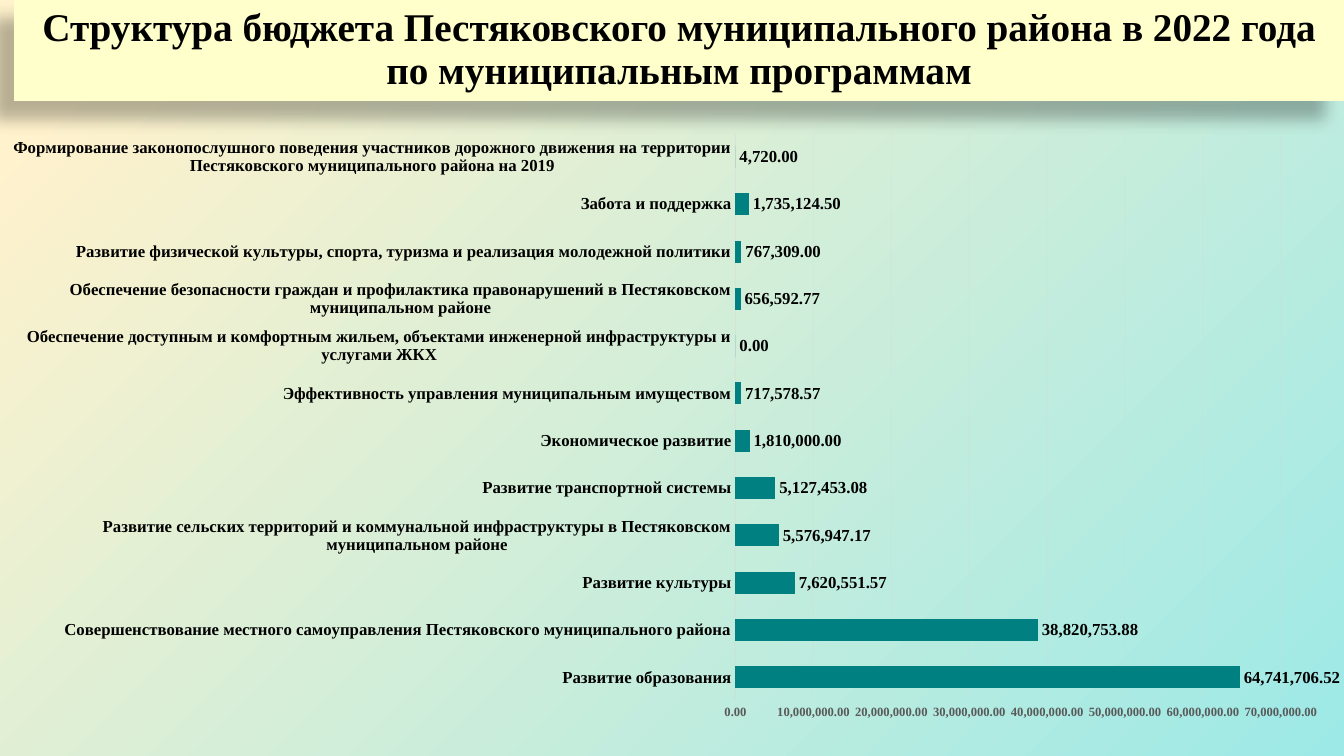
from dataclasses import dataclass

from pptx import Presentation
from pptx.chart.data import CategoryChartData
from pptx.dml.color import RGBColor as Rgb
from pptx.enum.chart import XL_CHART_TYPE as ChartType
from pptx.enum.chart import XL_LABEL_POSITION as LabelPosition
from pptx.enum.chart import XL_TICK_MARK as TickMark
from pptx.enum.text import MSO_ANCHOR as Anchor
from pptx.enum.text import MSO_AUTO_SIZE as AutoSize
from pptx.enum.text import PP_ALIGN as Align
from pptx.oxml import parse_xml
from pptx.oxml.ns import nsdecls, qn
from pptx.oxml.xmlchemy import OxmlElement
from pptx.util import Pt


@dataclass(frozen=True)
class Theme:
    font: str = "Times New Roman"
    base_font: str = "Calibri"
    ink: str = "000000"
    muted: str = "595959"
    grid: str = "D9D9D9"
    bar: str = "008080"
    banner: str = "FFFFCC"
    aqua: str = "9DE9E7"
    cream: str = "FFF2CC"
    title_size: float = 28
    label_size: float = 12
    base_size: float = 10
    scale_size: float = 9


@dataclass(frozen=True)
class Box:
    left: float
    top: float
    width: float
    height: float


@dataclass(frozen=True)
class Program:
    name: str
    amount: float


THEME = Theme()
TITLE = "Структура бюджета Пестяковского муниципального района в 2022 года по муниципальным программам"
TITLE_BOX = Box(10, 0, 950, 72)
CHART_BOX = Box(9.5, 86.5, 951, 436)
PLOT_SHARE = {"x": 0.542, "y": 0.02, "w": 0.41, "h": 0.93}
MONEY = "#,##0.00"
PROGRAMS = [
    Program("Развитие образования", 64741706.52),
    Program("Совершенствование местного самоуправления Пестяковского муниципального района", 38820753.88),
    Program("Развитие культуры", 7620551.57),
    Program("Развитие сельских территорий и коммунальной инфраструктуры в Пестяковском муниципальном районе", 5576947.17),
    Program("Развитие транспортной системы", 5127453.08),
    Program("Экономическое развитие", 1810000),
    Program("Эффективность управления муниципальным имуществом", 717578.57),
    Program("Обеспечение доступным и комфортным жильем, объектами инженерной инфраструктуры и услугами ЖКХ", 0),
    Program("Обеспечение безопасности граждан и профилактика правонарушений в Пестяковском муниципальном районе", 656592.77),
    Program("Развитие физической культуры, спорта, туризма и реализация молодежной политики", 767309),
    Program("Забота и поддержка", 1735124.5),
    Program("Формирование законопослушного поведения участников дорожного движения на территории Пестяковского муниципального района на 2019", 4720),
]


def style_font(font, *, size: float, color: str = THEME.ink, bold: bool = True, name: str = THEME.font) -> None:
    font.name = name
    font.size = Pt(size)
    font.bold = bold
    font.color.rgb = Rgb.from_string(color)


def write_text(frame, text: str, *, size: float, align: Align, spacing: float) -> None:
    frame.text = text
    frame.word_wrap = True
    frame.auto_size = AutoSize.NONE
    frame.vertical_anchor = Anchor.MIDDLE
    paragraph = frame.paragraphs[0]
    paragraph.alignment = align
    paragraph.line_spacing = spacing
    style_font(paragraph.runs[0].font, size=size)


def paint_background(slide) -> None:
    fill = slide.background.fill
    fill.gradient()
    for stop, color, position in zip(fill.gradient_stops, (THEME.aqua, THEME.cream), (0, 0.93)):
        stop.color.rgb = Rgb.from_string(color)
        stop.position = position
    gradient = slide.element.find(".//" + qn("a:gradFill"))
    linear = gradient.find(qn("a:lin"))
    if linear is not None:
        gradient.remove(linear)
    gradient.find(qn("a:gsLst")).addnext(parse_xml(
        f'<a:path {nsdecls("a")} path="circle"><a:fillToRect l="100000" t="100000"/></a:path>'))


def add_title(slide) -> None:
    banner = slide.shapes.title
    banner.left, banner.top = Pt(TITLE_BOX.left), Pt(TITLE_BOX.top)
    banner.width, banner.height = Pt(TITLE_BOX.width), Pt(TITLE_BOX.height)
    banner.fill.solid()
    banner.fill.fore_color.rgb = Rgb.from_string(THEME.banner)
    write_text(banner.text_frame, TITLE, size=THEME.title_size, align=Align.CENTER, spacing=0.9)
    banner.shadow.inherit = False
    banner.element.spPr.find(qn("a:effectLst")).append(parse_xml(
        f'<a:outerShdw {nsdecls("a")} blurRad="{Pt(11.8)}" dist="{Pt(19.7)}" dir="{141 * 60000}" '
        'algn="ctr" rotWithShape="0"><a:srgbClr val="000000"><a:alpha val="28000"/></a:srgbClr></a:outerShdw>'))


def style_faint_line(line_format, width: float) -> None:
    line_format.line.width = Pt(width)
    line_format.line.color.rgb = Rgb.from_string(THEME.grid)
    alpha = OxmlElement("a:alpha")
    alpha.set("val", "25000")
    line_format.element.find(".//" + qn("a:srgbClr")).append(alpha) if hasattr(
        line_format, "element") else line_format._element.find(
        qn("c:spPr")).find(".//" + qn("a:srgbClr")).append(alpha)


def place_plot(chart) -> None:
    plot_area = chart.element.find(".//" + qn("c:plotArea"))
    for layout in plot_area.findall(qn("c:layout")):
        plot_area.remove(layout)
    shares = "".join(f'<c:{side} val="{share}"/>' for side, share in PLOT_SHARE.items())
    plot_area.insert(0, parse_xml(
        f'<c:layout {nsdecls("c")}><c:manualLayout><c:layoutTarget val="inner"/>'
        f'<c:xMode val="edge"/><c:yMode val="edge"/>{shares}</c:manualLayout></c:layout>'))


def style_axes(chart) -> None:
    for axis, size, color in (
        (chart.category_axis, THEME.label_size, THEME.ink),
        (chart.value_axis, THEME.scale_size, THEME.muted),
    ):
        axis.major_tick_mark = axis.minor_tick_mark = TickMark.NONE
        style_font(axis.tick_labels.font, size=size, color=color)
    style_faint_line(chart.category_axis.format, 1)
    scale = chart.value_axis
    scale.minimum_scale, scale.maximum_scale, scale.major_unit = 0, 70_000_000, 10_000_000
    scale.tick_labels.number_format = MONEY
    scale.tick_labels.number_format_is_linked = False
    scale.format.line.fill.background()
    scale.has_major_gridlines = True
    style_faint_line(scale.major_gridlines.format, 0.75)


def add_budget_chart(slide) -> None:
    budget = CategoryChartData(number_format=MONEY)
    budget.categories = [program.name for program in PROGRAMS]
    budget.add_series("Series 1", [program.amount for program in PROGRAMS])
    chart = slide.shapes.add_chart(
        ChartType.BAR_CLUSTERED, Pt(CHART_BOX.left), Pt(CHART_BOX.top),
        Pt(CHART_BOX.width), Pt(CHART_BOX.height), budget).chart
    chart.has_legend = chart.has_title = False
    style_font(chart.font, size=THEME.base_size, bold=False, name=THEME.base_font)
    place_plot(chart)
    style_axes(chart)

    bars = chart.plots[0]
    bars.gap_width, bars.overlap, bars.vary_by_categories = 115, -20, False
    bar_fill = bars.series[0].format.fill
    bar_fill.solid()
    bar_fill.fore_color.rgb = Rgb.from_string(THEME.bar)
    amounts = bars.series[0].data_labels
    amounts.show_value = True
    amounts.position = LabelPosition.OUTSIDE_END
    amounts.number_format = MONEY
    amounts.number_format_is_linked = False
    style_font(amounts.font, size=THEME.label_size)


def main() -> None:
    deck = Presentation()
    deck.slide_width, deck.slide_height = Pt(960), Pt(540)
    slide = deck.slides.add_slide(deck.slide_layouts[5])
    paint_background(slide)
    add_title(slide)
    add_budget_chart(slide)
    deck.save("out.pptx")


if __name__ == "__main__":
    main()
